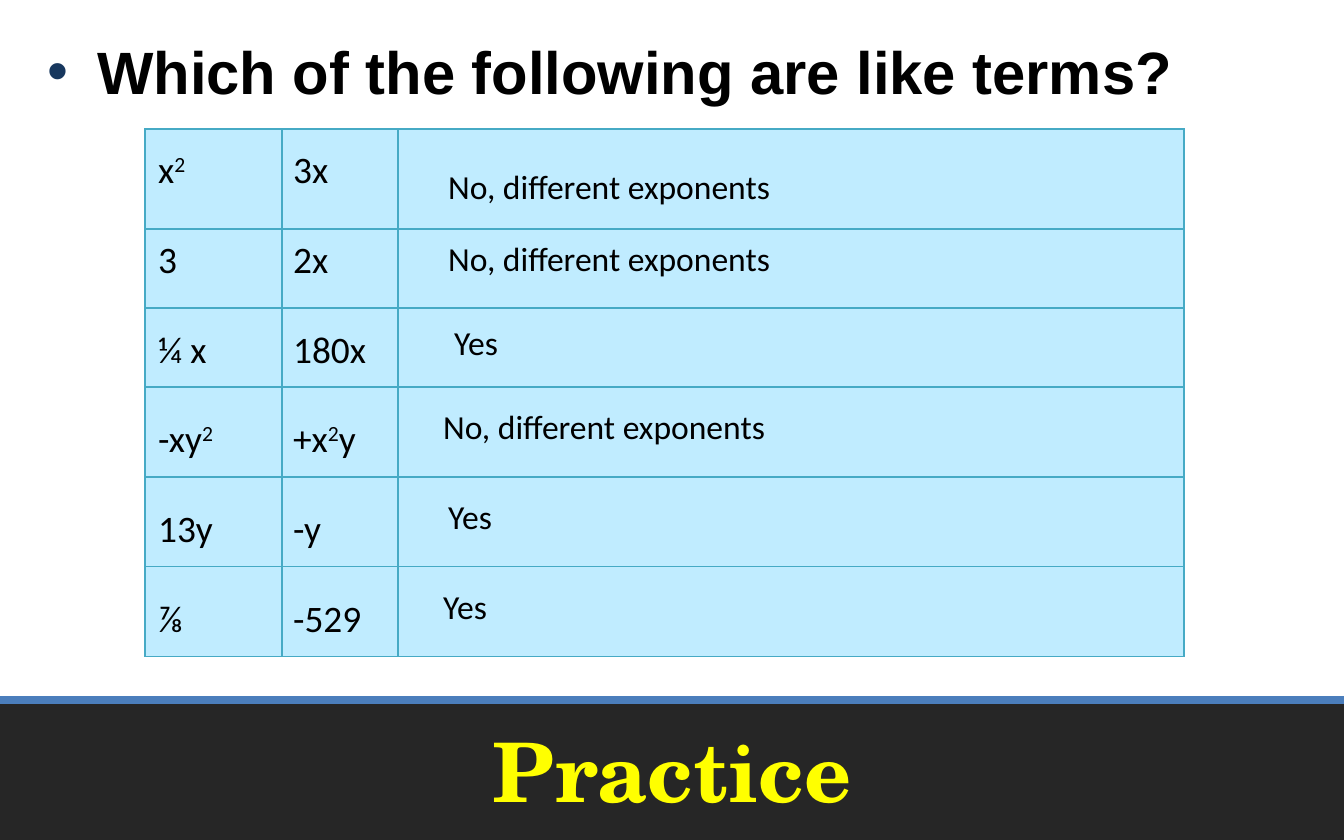
from lxml import etree
from pptx import Presentation
from pptx.dml.color import RGBColor
from pptx.enum.shapes import MSO_CONNECTOR, MSO_SHAPE
from pptx.enum.text import MSO_ANCHOR, PP_ALIGN
from pptx.oxml import parse_xml
from pptx.oxml.ns import nsdecls, qn
from pptx.util import Pt

RECTANGLE = MSO_SHAPE.RECTANGLE
STRAIGHT = MSO_CONNECTOR.STRAIGHT
MIDDLE = MSO_ANCHOR.MIDDLE
CENTER = PP_ALIGN.CENTER

PX = 914400 / 134.4  # EMU per pixel

THEME = {
    "band": "262626", "rule": "4B7EBC", "title": "FFFF00", "ink": "000000",
    "bullet": "17375E", "cell": "C0ECFF", "border": "46AAC5",
    "title_font": "TeX Gyre Schola", "question_font": "Arial",
    "term_font": "Calibri", "answer_font": "Calibri",
    "title_size": 44, "question_size": 32, "term_size": 20, "answer_size": 18,
    "rule_width": 4, "border_width": 0.75, "term_gap": 24,
}


def add_box(left, top, width, height):
    box = page.shapes.add_textbox(*(round(n * PX) for n in (left, top, width, height)))
    box.text_frame.word_wrap = True
    return box.text_frame


def add_run(para, text, role, color="ink", bold=False):
    span = para.add_run()
    span.text = text
    span.font.name = THEME[role + "_font"]
    span.font.size = Pt(THEME[role + "_size"])
    span.font.bold = bold
    span.font.color.rgb = RGBColor.from_string(THEME[color])
    return span


deck = Presentation()
deck.slide_width, deck.slide_height = round(1344 * PX), round(840 * PX)
page = deck.slides.add_slide(deck.slide_layouts[6])

# Footer band with its top rule
band_top = round(700 * PX)
band = page.shapes.add_shape(RECTANGLE, 0, band_top, deck.slide_width, deck.slide_height - band_top)
band.shadow.inherit = False
band.fill.solid()
band.fill.fore_color.rgb = RGBColor.from_string(THEME["band"])
band.line.fill.background()
rule = page.shapes.add_connector(STRAIGHT, 0, band_top, deck.slide_width, band_top)
rule.line.color.rgb = RGBColor.from_string(THEME["rule"])
rule.line.width = Pt(THEME["rule_width"])
etree.SubElement(rule.element.spPr, qn("a:effectLst"))

# Title
title = add_box(34, 700, 1277, 140)
title.vertical_anchor = MIDDLE
title.paragraphs[0].alignment = CENTER
add_run(title.paragraphs[0], "Practice", "title", color="title", bold=True)

# Bulleted question
question = add_box(34, 28, 1277, 90).paragraphs[0]
add_run(question, "Which of the following are like terms?", "question", bold=True)
bullet = question._p.get_or_add_pPr()
indent = round(50 * PX)
bullet.set("marL", str(indent))
bullet.set("indent", str(-indent))
for part in (
    '<a:spcBef {}><a:spcPct val="20000"/></a:spcBef>',
    '<a:buClr {}><a:srgbClr val="' + THEME["bullet"] + '"/></a:buClr>',
    '<a:buFont {} typeface="Arial"/>',
    '<a:buChar {} char="•"/>',
):
    bullet.append(parse_xml(part.format(nsdecls("a"))))

# Table grid
column_widths = [137, 116, 786]
row_heights = [100, 79, 79, 90, 90, 90]
grid = page.shapes.add_table(
    len(row_heights), len(column_widths), round(145 * PX), round(129 * PX),
    round(sum(column_widths) * PX), round(sum(row_heights) * PX)).table
grid.first_row = grid.horz_banding = False
for column, width in zip(grid.columns, column_widths):
    column.width = round(width * PX)
for row, height in zip(grid.rows, row_heights):
    row.height = round(height * PX)
for cell in grid.iter_cells():
    properties = cell._tc.get_or_add_tcPr()
    for side in ("lnL", "lnR", "lnT", "lnB"):
        edge = etree.SubElement(properties, qn("a:" + side), w=str(Pt(THEME["border_width"])))
        paint = etree.SubElement(edge, qn("a:solidFill"))
        etree.SubElement(paint, qn("a:srgbClr"), val=THEME["border"])
    cell.fill.solid()
    cell.fill.fore_color.rgb = RGBColor.from_string(THEME["cell"])

# Answers
different = "No, different exponents"
answers = [
    (435, 159, different), (435, 231, different), (441, 315, "Yes"),
    (430, 399, different), (435, 489, "Yes"), (430, 579, "Yes"),
]
for left, top, answer in answers:
    add_run(add_box(left, top, 500, 62).paragraphs[0], answer, "answer")

# Pairs of terms; every second piece is an exponent
pairs = [
    ["x", "2", "\t3x"], ["3\t2x"], ["¼ x\t180x"],
    ["-xy", "2", "\t+x", "2", "y"], ["13y\t-y"], ["⅞\t-529"],
]
second_term = str(round(135 * PX))
terms = add_box(145, 140, 298, 511)
for number, pieces in enumerate(pairs):
    para = terms.add_paragraph() if number else terms.paragraphs[0]
    if number:
        para.space_before = Pt(THEME["term_gap"])
    # The tab stop lines the second term up with the second column
    stops = etree.SubElement(para._p.get_or_add_pPr(), qn("a:tabLst"))
    etree.SubElement(stops, qn("a:tab"), pos=second_term, algn="l")
    for place, piece in enumerate(pieces):
        span = add_run(para, piece, "term")
        if place % 2:
            span.font._element.set("baseline", "30000")

deck.save("out.pptx")
